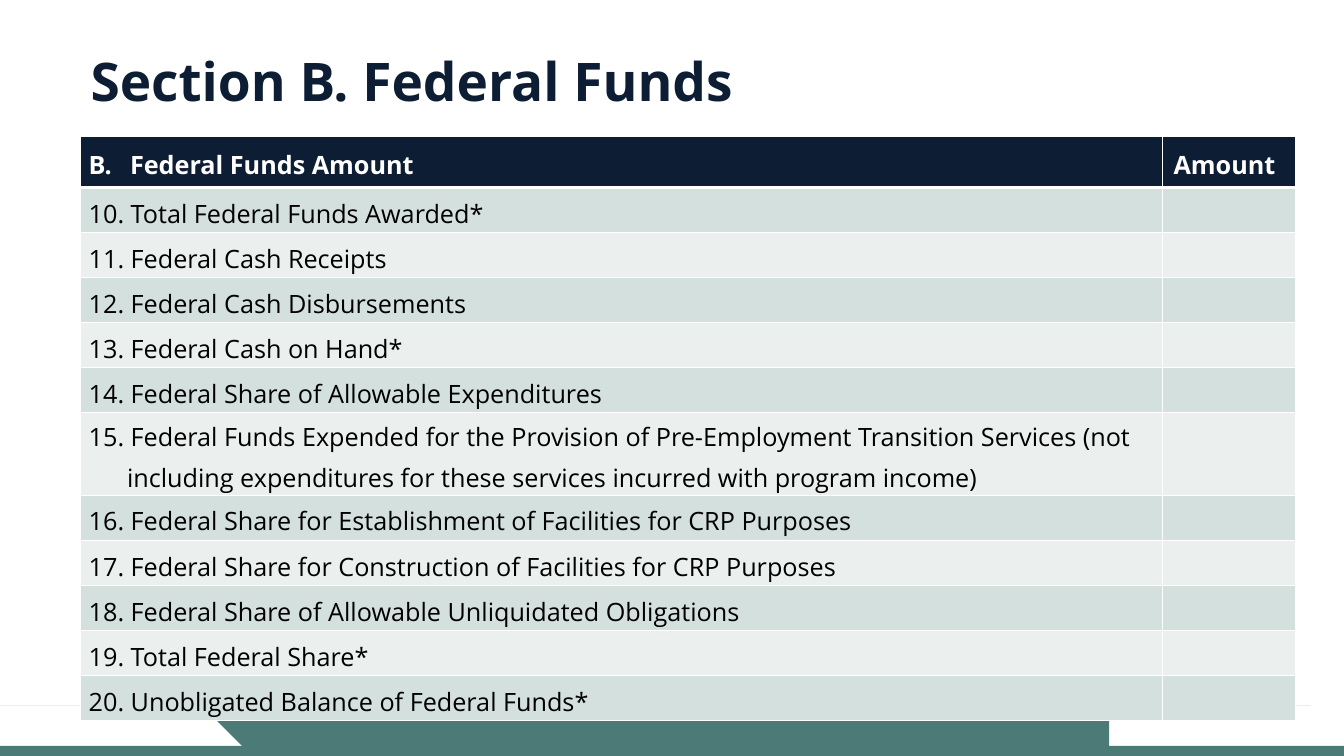
from lxml import etree
from pptx import Presentation
from pptx.dml.color import RGBColor
from pptx.enum.shapes import MSO_SHAPE
from pptx.enum.text import MSO_ANCHOR
from pptx.oxml.ns import qn
from pptx.util import Inches, Pt

RECT = MSO_SHAPE.RECTANGLE
MIDDLE, BOTTOM = MSO_ANCHOR.MIDDLE, MSO_ANCHOR.BOTTOM

# Content
TITLE = "Section B. Federal Funds"
HEADER = ("B.\tFederal Funds Amount", "Amount")
FIRST_NUMBER = 10
LINES = [
    "Total Federal Funds Awarded*",
    "Federal Cash Receipts",
    "Federal Cash Disbursements",
    "Federal Cash on Hand*",
    "Federal Share of Allowable Expenditures",
    "Federal Funds Expended for the Provision of Pre-Employment Transition Services "
    "(not including expenditures for these services incurred with program income)",
    "Federal Share for Establishment of Facilities for CRP Purposes",
    "Federal Share for Construction of Facilities for CRP Purposes",
    "Federal Share of Allowable Unliquidated Obligations",
    "Total Federal Share*",
    "Unobligated Balance of Federal Funds*",
]
WRAPPED = 5  # index of the two-line entry

# Look and measures, in inches
FONT = "Open Sans"
NAVY, TEAL, WHITE, BLACK = "0D1D34", "4C7A76", "FFFFFF", "000000"
BANDS = ("D4E0DE", "EBF0EF")
SLIDE_W, SLIDE_H = 13.33, 7.5
TABLE_LEFT, TABLE_TOP, TABLE_H = 0.8, 1.35, 5.8
COLUMNS = (10.73, 1.32)
HEADER_H, WRAPPED_H = 0.51, 0.82
LINE_H = (TABLE_H - HEADER_H - WRAPPED_H) / (len(LINES) - 1)
HANGING, HEADER_TAB = 0.38, 0.41

# Wave edges as cubic curves: start, two controls, end
WAVE = [
    ((0, 6.73), (0, 6.78), (4.4, 7.1), (6.62, 7.11)),
    ((6.62, 7.11), (8.85, 7.11), (13.33, 6.8), (13.33, 6.75)),
    ((13.33, 7.43), (13.33, 7.48), (10.35, 7.52), (6.67, 7.52)),
    ((6.67, 7.52), (2.99, 7.52), (0, 7.48), (0, 7.43)),
]
CURVE_STEPS = 24


def color(hex_value):
    return RGBColor.from_string(hex_value)


def paint(shape):
    shape.fill.solid()
    shape.fill.fore_color.rgb = color(TEAL)
    shape.line.fill.background()
    shape.shadow.inherit = False


def style(paragraph, size, hex_value, bold, spacing):
    paragraph.line_spacing = spacing
    font = paragraph.font
    font.name, font.size, font.bold = FONT, Pt(size), bold
    font.color.rgb = color(hex_value)


def curve_points(curve):
    for step in range(CURVE_STEPS + 1):
        t = step / CURVE_STEPS
        weights = ((1 - t) ** 3, 3 * t * (1 - t) ** 2, 3 * t * t * (1 - t), t ** 3)
        yield tuple(sum(w * point[axis] for w, point in zip(weights, curve))
                    for axis in (0, 1))


def set_borders(cell, widths):
    properties = cell._tc.get_or_add_tcPr()
    for side, width in zip("LRTB", widths):
        border = etree.SubElement(properties, qn(f"a:ln{side}"), w=str(Pt(width)))
        fill = etree.SubElement(border, qn("a:solidFill"))
        etree.SubElement(fill, qn("a:srgbClr"), val=WHITE)


def fill_cell(cell, text, row, column):
    is_header = row == 0
    set_borders(cell, (1, 1, 1 if row != 1 else 3, 3 if is_header else 1))
    cell.fill.solid()
    cell.fill.fore_color.rgb = color(NAVY if is_header else BANDS[(row - 1) % 2])
    cell.vertical_anchor = MIDDLE
    side, edge = ((0.08, 0), (0.11, 0.05))[column]
    cell.margin_left = cell.margin_right = Inches(side)
    cell.margin_top = cell.margin_bottom = Inches(edge)
    if not text:
        return
    cell.text = text
    paragraph = cell.text_frame.paragraphs[0]
    properties = paragraph._p.get_or_add_pPr()
    if "\t" in text:
        tabs = etree.SubElement(properties, qn("a:tabLst"))
        etree.SubElement(tabs, qn("a:tab"), pos=str(Inches(HEADER_TAB)), algn="l")
    if row == WRAPPED + 1:
        properties.set("marL", str(Inches(HANGING)))
        properties.set("indent", str(-Inches(HANGING)))
    style(paragraph, 18, WHITE if is_header else BLACK, is_header, 1.2)


def main():
    prs = Presentation()
    prs.slide_width, prs.slide_height = Inches(SLIDE_W), Inches(SLIDE_H)
    slide = prs.slides.add_slide(prs.slide_layouts[6])
    shapes = slide.shapes

    # Footer band and wave
    paint(shapes.add_shape(RECT, 0, Inches(7.4), Inches(SLIDE_W), Inches(0.1)))
    outline = [point for curve in WAVE for point in curve_points(curve)]
    builder = shapes.build_freeform(*outline[0], scale=Inches(1))
    builder.add_line_segments(outline[1:], close=True)
    paint(builder.convert_to_shape())

    # Title
    title = shapes.add_textbox(Inches(0.8), Inches(0.4), Inches(11.76), Inches(0.76))
    title.text_frame.word_wrap = True
    title.text_frame.vertical_anchor = BOTTOM
    title.text_frame.text = TITLE
    style(title.text_frame.paragraphs[0], 38, NAVY, True, 1.02)

    # Funds table
    entries = [(f"{number}. {line}", "") for number, line in enumerate(LINES, FIRST_NUMBER)]
    rows = [HEADER] + entries
    funds = shapes.add_table(len(rows), len(COLUMNS), Inches(TABLE_LEFT), Inches(TABLE_TOP),
                             Inches(sum(COLUMNS)), Inches(TABLE_H)).table
    for column, width in enumerate(COLUMNS):
        funds.columns[column].width = Inches(width)
    heights = {0: HEADER_H, WRAPPED + 1: WRAPPED_H}
    for row, texts in enumerate(rows):
        funds.rows[row].height = Inches(heights.get(row, LINE_H))
        for column, text in enumerate(texts):
            fill_cell(funds.cell(row, column), text, row, column)

    prs.save("out.pptx")


if __name__ == "__main__":
    main()
